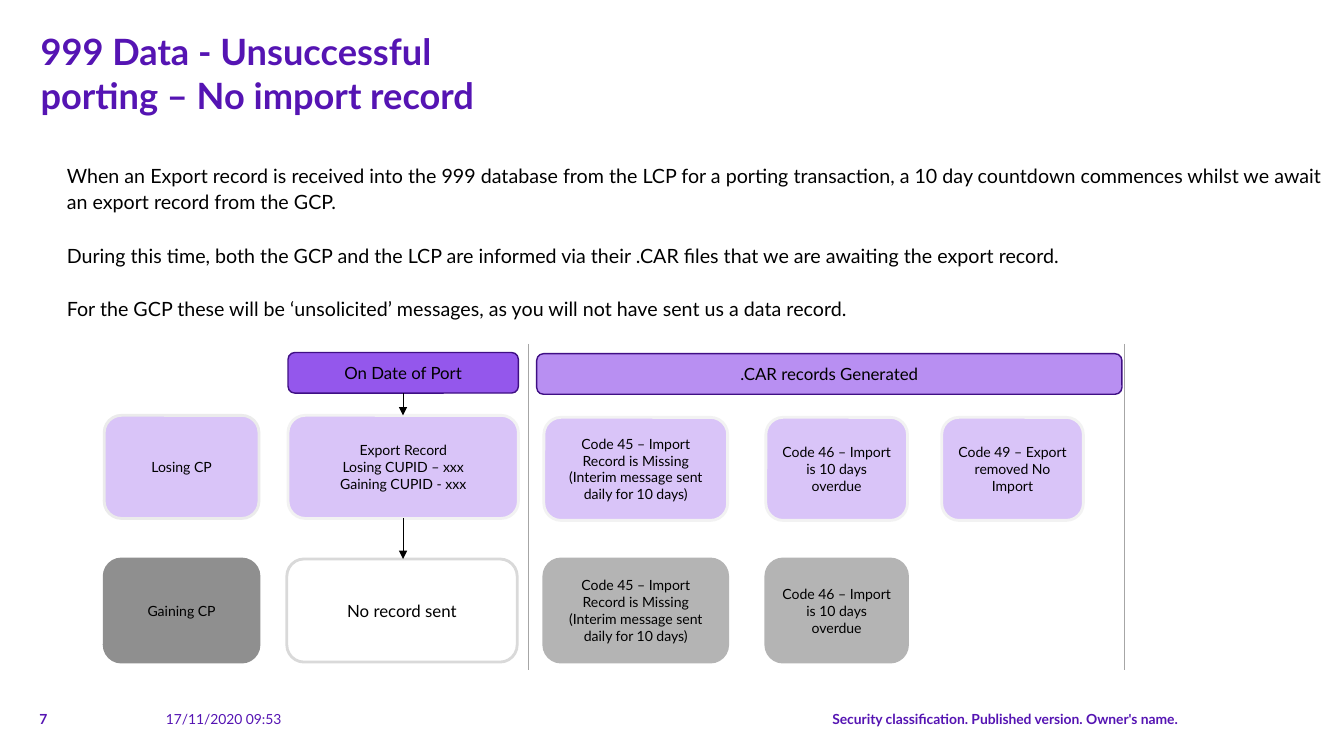
from lxml import etree
from pptx import Presentation
from pptx import util as u
from pptx.dml.color import RGBColor
from pptx.enum import shapes, text
from pptx.oxml import ns

FONT = "Lato"
COLORS = {
    "brand": "5514B3", "black": "000000", "white": "FFFFFF",
    "violet": "9457EC", "mauve": "B88FF2", "lilac": "D9C4F8", "indigo": "3F0F84",
    "dark_grey": "8F8F8F", "grey": "B4B4B4", "rule": "A6A6A6",
    "edge": "D9D9D9", "pale_edge": "EBEBEB", "faint_edge": "F2F2F2",
}
BOX_H = 2.59
HEADER_H = 1.02
LOSING_Y, CODES_Y, GAINING_Y = 10.44, 10.49, 14.05
PARTY = (2.62, 3.89)
RECORD = (7.24, 5.79)
CODE_COLUMNS = [(13.67, 4.62), (19.25, 3.56), (23.67, 3.56)]
ARROW_X = 10.13

BODY = [
    "When an Export record is received into the 999 database from the LCP for a porting "
    "transaction, a 10 day countdown commences whilst we await an export record from the GCP.",
    "During this time, both the GCP and the LCP are informed via their .CAR files that we are "
    "awaiting the export record.",
    "For the GCP these will be ‘unsolicited’ messages, as you will not have sent us a data record.",
]
CODE_45 = ["Code 45 – Import Record is Missing", "(Interim message sent daily for 10 days)"]
CODE_46 = ["Code 46 – Import is 10 days overdue"]
CODE_49 = ["Code 49 – Export removed No Import"]


def rgb(name):
    return RGBColor.from_string(COLORS[name])


def write(tf, lines, size=10, color="black", bold=False, align=text.PP_ALIGN.LEFT,
          anchor=text.MSO_ANCHOR.TOP, spacing=None, after=0):
    tf.word_wrap = True
    tf.vertical_anchor = anchor
    for i, line in enumerate(lines):
        p = tf.paragraphs[0] if i == 0 else tf.add_paragraph()
        p.alignment = align
        p.space_after = u.Pt(after)
        if spacing:
            p.line_spacing = spacing
        r = p.add_run()
        r.text = line
        r.font.name = FONT
        r.font.size = u.Pt(size)
        r.font.bold = bold
        r.font.color.rgb = rgb(color)


def add_text(s, x, y, w, h, lines, **fmt):
    tf = s.shapes.add_textbox(u.Cm(x), u.Cm(y), u.Cm(w), u.Cm(h)).text_frame
    tf.margin_left = tf.margin_right = tf.margin_top = tf.margin_bottom = 0
    write(tf, lines, **fmt)


def add_box(s, column, y, lines, fill, edge, h=BOX_H, weight=2, size=10):
    x, w = column
    sp = s.shapes.add_shape(shapes.MSO_SHAPE.ROUNDED_RECTANGLE,
                            u.Cm(x), u.Cm(y), u.Cm(w), u.Cm(h))
    sp.shadow.inherit = False
    sp.fill.solid()
    sp.fill.fore_color.rgb = rgb(fill)
    sp.line.color.rgb = rgb(edge)
    sp.line.width = u.Pt(weight)
    write(sp.text_frame, lines, size=size, align=text.PP_ALIGN.CENTER,
          anchor=text.MSO_ANCHOR.MIDDLE)


def add_vertical(s, x, top, bottom, color, weight, arrow=False):
    c = s.shapes.add_connector(shapes.MSO_CONNECTOR.STRAIGHT,
                               u.Cm(x), u.Cm(top), u.Cm(x), u.Cm(bottom))
    c.line.color.rgb = rgb(color)
    c.line.width = u.Pt(weight)
    if arrow:
        etree.SubElement(c.line._get_or_add_ln(), ns.qn("a:tailEnd"), type="triangle")
    etree.SubElement(c._element.spPr, ns.qn("a:effectLst"))


def add_footer(s):
    for x, w, line, bold, align in [
        (0.99, 0.99, "7", True, text.PP_ALIGN.LEFT),
        (4.17, 5.16, "17/11/2020 09:53", False, text.PP_ALIGN.LEFT),
        (10.13, 19.48, "Security classification. Published version. Owner's name.",
         True, text.PP_ALIGN.RIGHT),
    ]:
        add_text(s, x, 17.55, w, 0.74, [line], size=9.9, color="brand", bold=bold,
                 align=align, anchor=text.MSO_ANCHOR.BOTTOM)


def add_flow(s):
    add_box(s, RECORD, 8.86, ["On Date of Port"], "violet", "indigo",
            h=HEADER_H, weight=1, size=12)
    add_box(s, (13.49, 14.71), 8.89, [".CAR records Generated"], "mauve", "indigo",
            h=HEADER_H, weight=1, size=12)
    add_box(s, PARTY, LOSING_Y, ["Losing CP"], "lilac", "pale_edge")
    add_box(s, PARTY, GAINING_Y, ["Gaining CP"], "dark_grey", "dark_grey")
    add_box(s, RECORD, LOSING_Y,
            ["Export Record", "Losing CUPID – xxx", "Gaining CUPID - xxx"],
            "lilac", "faint_edge")
    add_box(s, (7.21, 5.79), GAINING_Y, ["No record sent"], "white", "edge", size=12)
    for y, codes, fill, edge in [
        (CODES_Y, [CODE_45, CODE_46, CODE_49], "lilac", "faint_edge"),
        (GAINING_Y, [CODE_45, CODE_46], "grey", "grey"),
    ]:
        for column, lines in zip(CODE_COLUMNS, codes):
            add_box(s, column, y, lines, fill, edge)
    for top, bottom in [(8.86 + HEADER_H, LOSING_Y), (LOSING_Y + BOX_H, GAINING_Y)]:
        add_vertical(s, ARROW_X, top, bottom, "black", 0.5, arrow=True)
    for x in (13.28, 28.27):
        add_vertical(s, x, 8.64, 16.84, "rule", 0.75)


def main():
    prs = Presentation()
    prs.slide_width, prs.slide_height = u.Cm(33.78), u.Cm(19)
    s = prs.slides.add_slide(prs.slide_layouts[6])
    add_text(s, 1.02, 0.74, 12.9, 2.21,
             ["999 Data - Unsuccessful porting – No import record"],
             size=25.8, color="brand", bold=True)
    add_text(s, 1.68, 4.07, 31.6, 4.3, BODY, size=14, spacing=1.1, after=19.4)
    add_flow(s)
    add_footer(s)
    prs.save("out.pptx")


if __name__ == "__main__":
    main()
